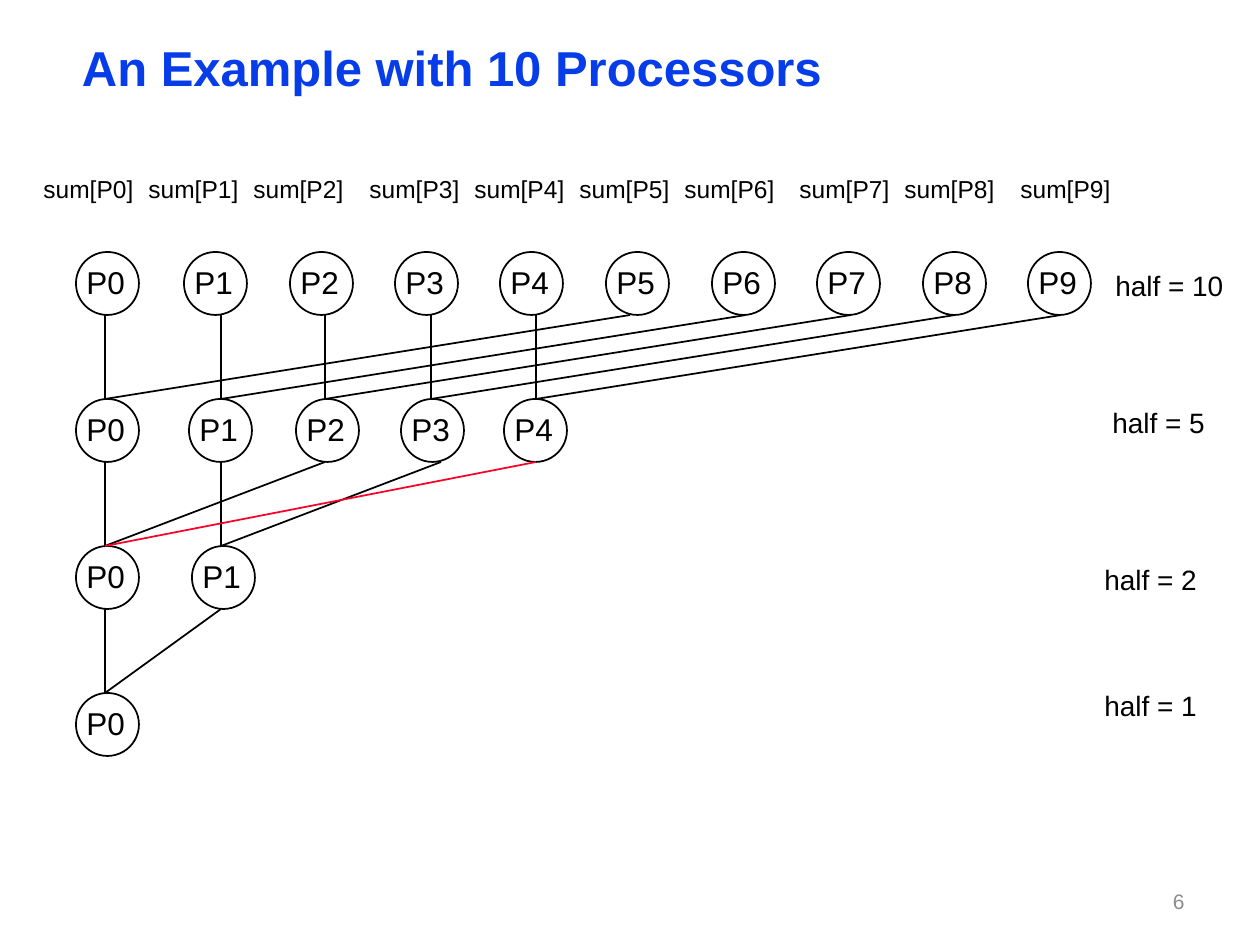
import pptx
import pptx.util
import pptx.dml.color
import pptx.enum.shapes
import pptx.enum.text
import pptx.oxml

COLORS = {"title": "063DE8", "ink": "000000", "odd": "FC0128", "number": "8C8C8C"}
EMU_PER_PX = 914400 / 126
DIAMETER = 63
ROW_STEP = 147
ANCHOR = pptx.enum.text.MSO_ANCHOR
ALIGN = pptx.enum.text.PP_ALIGN
GROW = pptx.enum.text.MSO_AUTO_SIZE.SHAPE_TO_FIT_TEXT

NODE_LEFTS = [
    [0, 108, 214, 319, 424, 530, 636, 741, 847, 952],
    [0, 113, 220, 325, 428],
    [0, 116],
    [0],
]
LINE_ENDS = [29, 145, 249, 355, 460, 554, 670, 775, 879, 985]
LINKS = [
    [(source, source % 5) for source in range(10)],
    [(0, 0), (1, 1), (2, 0), (3, 1), (4, 0)],
    [(0, 0), (1, 0)],
]
ODD_LINK = (1, 4)
SUM_LEFTS = [0, 105, 210, 326, 431, 536, 641, 756, 861, 977]
HALVES = [
    ("half = 10", 11, 0, 134),
    ("half = 5", 8, 137, 118),
    ("half = 2", 0, 294, 118),
    ("half = 1", 0, 420, 118),
]


def emu(px):
    return pptx.util.Emu(round(px * EMU_PER_PX))


def color(name):
    return pptx.dml.color.RGBColor.from_string(COLORS[name])


def set_all(target, values):
    for name, value in values.items():
        setattr(target, name, value)


def fill_text(shape, text, size, color_name="ink", frame_values=None,
              paragraph_values=None, bold=False):
    frame = shape.text_frame
    frame.text = text
    set_all(frame, frame_values or {"word_wrap": False, "auto_size": GROW})
    paragraph = frame.paragraphs[0]
    set_all(paragraph, paragraph_values or {})
    font = paragraph.runs[0].font
    set_all(font, {"name": "Arial", "size": pptx.util.Pt(size), "bold": bold})
    font.color.rgb = color(color_name)


def add_label(slide, box, text, size, **formats):
    shape = slide.shapes.add_textbox(*map(emu, box))
    fill_text(shape, text, size, **formats)


def add_line(slide, start, end, color_name):
    connector = slide.shapes.add_connector(
        pptx.enum.shapes.MSO_CONNECTOR.STRAIGHT, *map(emu, start + end))
    connector.line.color.rgb = color(color_name)
    connector.line.width = pptx.util.Pt(1)
    properties = connector._element.spPr
    properties.append(properties.makeelement(pptx.oxml.ns.qn("a:effectLst"), {}))


def add_node(slide, left, top, text):
    circle = slide.shapes.add_shape(
        pptx.enum.shapes.MSO_SHAPE.OVAL, *map(emu, (left, top, DIAMETER, DIAMETER)))
    circle.shadow.inherit = False
    circle.fill.background()
    circle.line.color.rgb = color("ink")
    circle.line.width = pptx.util.Pt(1)
    add_label(slide, (left - 2, top + 5, 64, 50), text, 18)


def add_title(slide, box):
    title = slide.shapes.title
    set_all(title, dict(zip(("left", "top", "width", "height"), map(emu, box))))
    fill_text(
        title, "An Example with 10 Processors", 28, "title", bold=True,
        frame_values={
            "word_wrap": True, "auto_size": GROW, "vertical_anchor": ANCHOR.MIDDLE,
            "margin_left": emu(9), "margin_right": emu(9),
            "margin_top": emu(4), "margin_bottom": emu(4),
        },
        paragraph_values={"alignment": ALIGN.LEFT, "line_spacing": 0.87})


def add_sums(slide, box):
    left, top, width, height = box
    for index, offset in enumerate(SUM_LEFTS):
        add_label(slide, (left + offset, top, 116, height), f"sum[P{index}]", 14)


def add_tree(slide, box):
    left, top, width, height = box
    for row, offsets in enumerate(NODE_LEFTS):
        for index, offset in enumerate(offsets):
            add_node(slide, left + offset, top + row * ROW_STEP, f"P{index}")
    for row, links in enumerate(LINKS):
        start_y = top + row * ROW_STEP + DIAMETER
        end_y = top + (row + 1) * ROW_STEP
        for source, target in links:
            start_x = left + LINE_ENDS[source]
            if (row, source) == (1, 3):
                start_x += 10
            add_line(slide, (start_x, start_y), (left + LINE_ENDS[target], end_y),
                     "odd" if (row, source) == ODD_LINK else "ink")


def add_halves(slide, box):
    left, top, width, height = box
    for text, across, down, label_width in HALVES:
        add_label(slide, (left + across, top + down, label_width, 47), text, 16)


def add_slide_number(slide, box):
    add_label(slide, box, "6", 12, color_name="number",
              frame_values={"word_wrap": True, "vertical_anchor": ANCHOR.MIDDLE},
              paragraph_values={"alignment": ALIGN.RIGHT})


def main():
    presentation = pptx.Presentation()
    presentation.slide_width = emu(1260)
    presentation.slide_height = emu(945)
    slide = presentation.slides.add_slide(presentation.slide_layouts[5])
    add_title(slide, (73, 42, 1124, 58))
    add_sums(slide, (31, 168, 1093, 43))
    add_tree(slide, (76, 252, 1015, 504))
    add_halves(slide, (1092, 262, 145, 467))
    add_slide_number(slide, (903, 876, 294, 50))
    presentation.save("out.pptx")


if __name__ == "__main__":
    main()
